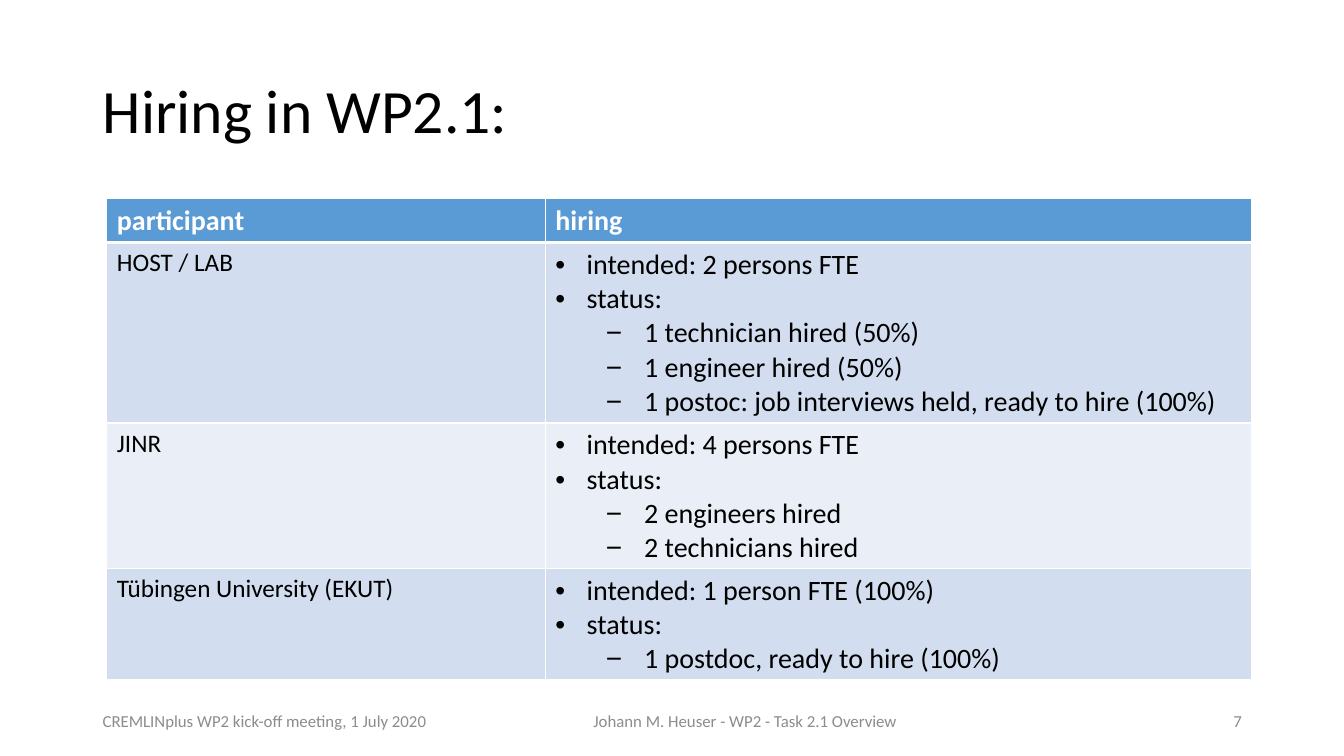
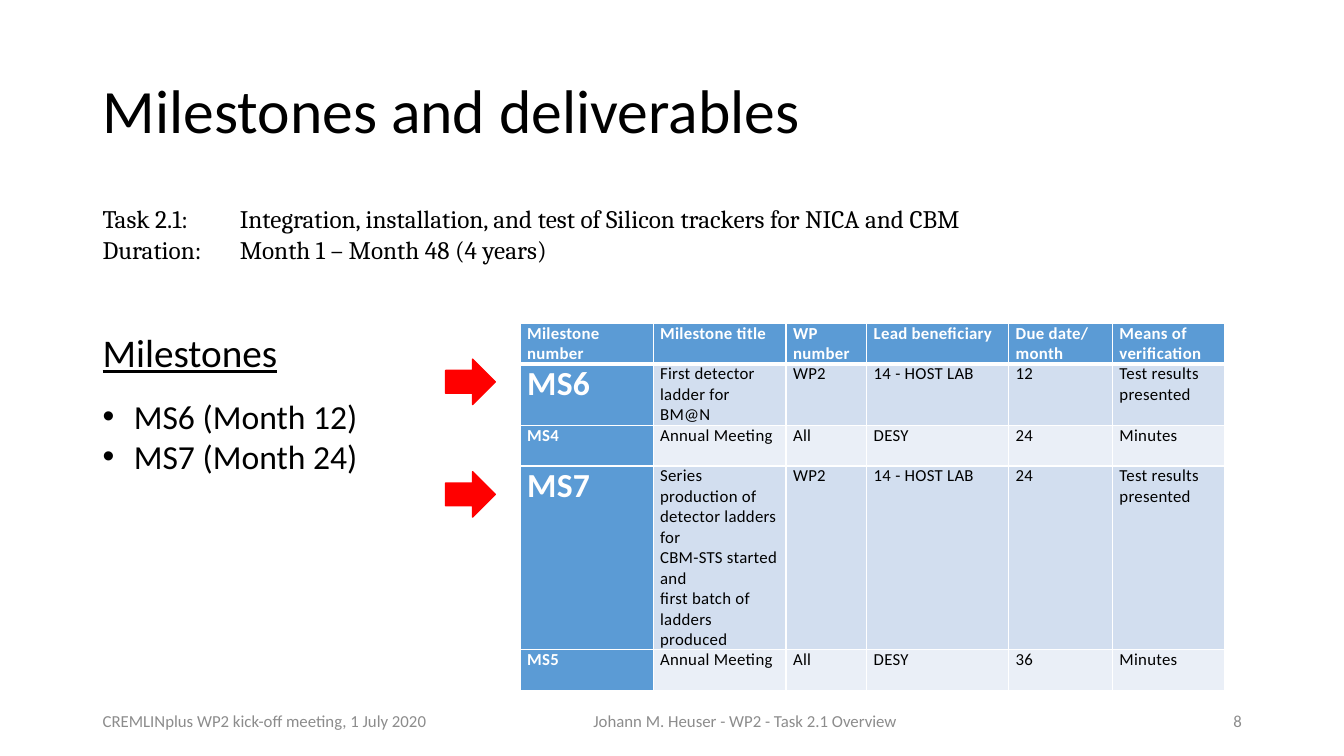
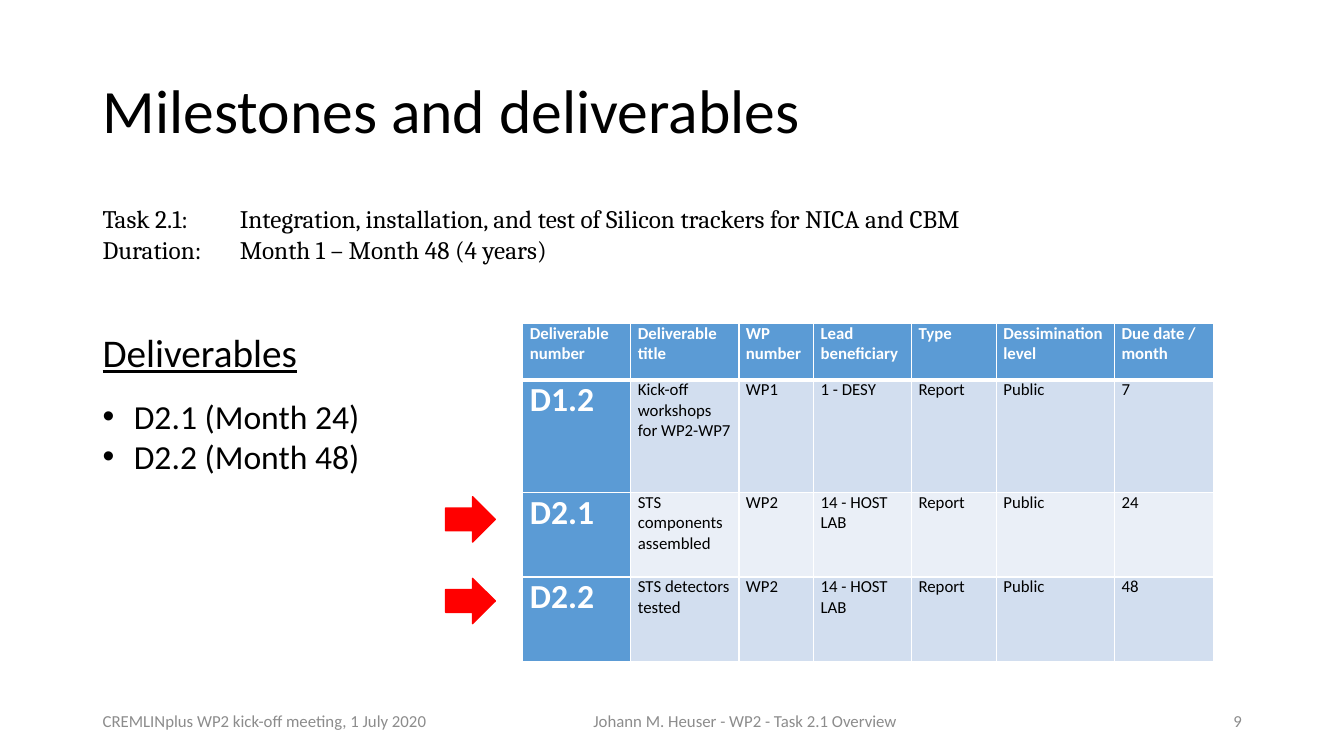
from lxml.etree import SubElement
from pptx import Presentation
from pptx.dml.color import RGBColor
from pptx.enum.shapes import MSO_SHAPE
from pptx.enum.text import MSO_ANCHOR, PP_ALIGN
from pptx.oxml import parse_xml
from pptx.oxml.ns import nsdecls, qn
from pptx.util import Inches, Pt

# Shared style
BLACK = RGBColor(0x00, 0x00, 0x00)
WHITE = RGBColor(0xFF, 0xFF, 0xFF)
GRAY = RGBColor(0x8C, 0x8C, 0x8C)
RED = RGBColor(0xFF, 0x00, 0x00)
BLUE = RGBColor(0x5B, 0x9B, 0xD5)
BANDS = (RGBColor(0xD2, 0xDE, 0xEF), RGBColor(0xEA, 0xEF, 0xF7))

LEFT = 6.9          # left margin, in percent of the slide width
CONTENT_TOP = 26.3  # vertical positions, in percent of the slide height
DETAIL_TOP = 42.8

# Bullet character, left margin and hanging indent in inches, by level
BULLETS = {1: ("•", 0.31, 0.31), 2: ("−", 0.88, 0.38)}


def add_bullet(paragraph, level):
    character, margin, hanging = BULLETS[level]
    properties = paragraph._p.get_or_add_pPr()
    properties.set("marL", str(Inches(margin)))
    properties.set("indent", str(-Inches(hanging)))
    properties.set("lvl", str(level - 1))
    SubElement(properties, qn("a:buFont"), typeface="Arial")
    SubElement(properties, qn("a:buChar"), char=character)


def add_tab(paragraph, position):
    tabs = SubElement(paragraph._p.get_or_add_pPr(), qn("a:tabLst"))
    SubElement(tabs, qn("a:tab"), pos=str(Inches(position)), algn="l")


def write(text_frame, lines, size=18, color=BLACK, font="Calibri", bold=False,
          underline=False, align=PP_ALIGN.LEFT, line_spacing=None, tab=None,
          tracking=0):
    """Fill a text frame; a line is a string or a (string, bullet level) pair."""
    for index, line in enumerate([lines] if isinstance(lines, str) else lines):
        text, level = (line, None) if isinstance(line, str) else line
        paragraph = text_frame.add_paragraph() if index else text_frame.paragraphs[0]
        if level:
            add_bullet(paragraph, level)
        if tab:
            add_tab(paragraph, tab)
        paragraph.alignment = align
        if line_spacing:
            paragraph.line_spacing = line_spacing
        run = paragraph.add_run()
        run.text = text
        run.font.name = font
        run.font.size = Pt(size)
        run.font.bold = bold
        run.font.underline = underline
        run.font.color.rgb = color
        if tracking:
            run._r.get_or_add_rPr().set("spc", str(round(tracking * 100)))


def set_borders(cell, top=1, bottom=1):
    widths = {"lnL": 1, "lnR": 1, "lnT": top, "lnB": bottom}
    properties = cell._tc.get_or_add_tcPr()
    for position, (side, width) in enumerate(widths.items()):
        properties.insert(position, parse_xml(
            f'<a:{side} {nsdecls("a")} w="{Pt(width)}"><a:solidFill>'
            f'<a:srgbClr val="{WHITE}"/></a:solidFill></a:{side}>'))


class Deck:
    """Holds the presentation and the slide that is being filled."""

    def __init__(self):
        self.presentation = Presentation()
        self.presentation.slide_width = Inches(13.33)
        self.presentation.slide_height = Inches(7.5)
        self.slide = None

    def place(self, left, top, width, height):
        """Turn percentages of the slide's size into lengths."""
        across = self.presentation.slide_width / 100
        down = self.presentation.slide_height / 100
        return (round(left * across), round(top * down),
                round(width * across), round(height * down))

    def text(self, lines, area, anchor=MSO_ANCHOR.TOP, wrap=True, **style):
        text_frame = self.slide.shapes.add_textbox(*self.place(*area)).text_frame
        text_frame.word_wrap = wrap
        text_frame.vertical_anchor = anchor
        write(text_frame, lines, **style)

    def start(self, title, number):
        """Add a slide with its title and footer."""
        self.slide = self.presentation.slides.add_slide(
            self.presentation.slide_layouts[6])
        self.text(title, (LEFT, 5.33, 86.25, 19.33), MSO_ANCHOR.MIDDLE,
                  size=44, line_spacing=0.9)
        footer = (
            ("CREMLINplus WP2 kick-off meeting, 1 July 2020", LEFT, 26.7, PP_ALIGN.LEFT),
            ("Johann M. Heuser - WP2 - Task 2.1 Overview", 35, 40.9, PP_ALIGN.CENTER),
            (str(number), 77.25, 15.9, PP_ALIGN.RIGHT),
        )
        for text, left, width, align in footer:
            self.text(text, (left, 92.67, width, 5.33), MSO_ANCHOR.MIDDLE,
                      size=12, color=GRAY, align=align)

    def task(self):
        self.text(["Task 2.1:\tIntegration, installation, and test of Silicon "
                   "trackers for NICA and CBM",
                   "Duration:\tMonth 1 – Month 48 (4 years)"],
                  (LEFT, CONTENT_TOP, 88.65, 9.5), font="Cambria",
                  align=PP_ALIGN.JUSTIFY, tab=1.36)

    def summary(self, heading, items):
        self.text(heading, (LEFT, DETAIL_TOP, 16, 7.6), wrap=False,
                  size=28, underline=True)
        self.text([(item, 1) for item in items], (LEFT, 51.7, 21.4, 12.1), size=24)

    def arrows(self, *tops):
        for top in tops:
            arrow = self.slide.shapes.add_shape(
                MSO_SHAPE.RIGHT_ARROW, *self.place(33.15, top, 3.7, 6))
            arrow.shadow.inherit = False
            arrow.fill.solid()
            arrow.fill.fore_color.rgb = RED
            arrow.line.color.rgb = RED
            arrow.line.width = Pt(1)

    def table(self, rows, area, column_shares, row_shares, style, compact=False):
        """Add a table; style(row, column, value) gives a cell's text format."""
        left, top, width, height = self.place(*area)
        table = self.slide.shapes.add_table(
            len(rows), len(rows[0]), left, top, width, height).table
        for column, share in zip(table.columns, column_shares):
            column.width = round(width * share / sum(column_shares))
        for row, share in zip(table.rows, row_shares):
            row.height = round(height * share / sum(row_shares))
        for row_index, values in enumerate(rows):
            for column_index, value in enumerate(values):
                cell = table.cell(row_index, column_index)
                if compact:
                    cell.margin_left = cell.margin_right = Inches(0.07)
                    cell.margin_top = cell.margin_bottom = 0
                is_head = row_index == 0 or (compact and column_index == 0)
                cell.fill.solid()
                cell.fill.fore_color.rgb = BLUE if is_head else BANDS[(row_index + 1) % 2]
                set_borders(cell, top=3 if row_index == 1 else 1,
                            bottom=3 if row_index == 0 else 1)
                write(cell.text_frame, value, color=WHITE if is_head else BLACK,
                      bold=is_head, **style(row_index, column_index, value))

    def compact_table(self, rows, area, column_shares, row_shares, large, tracking=0):
        """Add a small-type table whose listed row heads are enlarged."""
        self.table(rows, area, column_shares, row_shares, compact=True,
                   style=lambda row, column, value: {
                       "size": 24 if value in large else 12, "tracking": tracking})


def hiring(intended, *status):
    return [(f"intended: {intended}", 1), ("status:", 1)] + [(item, 2) for item in status]


def main():
    deck = Deck()

    # Hiring
    deck.start("Hiring in WP2.1:", 7)
    deck.table(
        [("participant", "hiring"),
         ("HOST / LAB", hiring("2 persons FTE", "1 technician hired (50%)",
                               "1 engineer hired (50%)",
                               "1 postoc: job interviews held, ready to hire (100%)")),
         ("JINR", hiring("4 persons FTE", "2 engineers hired", "2 technicians hired")),
         ("Tübingen University (EKUT)",
          hiring("1 person FTE (100%)", "1 postdoc, ready to hire (100%)"))],
        (7.95, CONTENT_TOP, 85.2, 63.1), (4.35, 7.01), (0.41, 1.79, 1.44, 1.09),
        style=lambda row, column, value: {"size": 18 if row and column == 0 else 20})

    # Milestones
    deck.start("Milestones and deliverables", 8)
    deck.task()
    deck.compact_table(
        [("Milestone number", "Milestone title", "WP number", "Lead beneficiary",
          "Due date/ month", "Means of verification"),
         ("MS6", ["First detector ladder for", "BM@N"], "WP2", "14 - HOST LAB",
          "12", "Test results presented"),
         ("MS4", "Annual Meeting", "All", "DESY", "24", "Minutes"),
         ("MS7", ["Series production of", "detector ladders for",
                  "CBM-STS started and", "first batch of ladders", "produced"],
          "WP2", "14 - HOST LAB", "24", "Test results presented"),
         ("MS5", "Annual Meeting", "All", "DESY", "36", "Minutes")],
        (38.7, DETAIL_TOP, 52.4, 48.5), (1.32, 1.32, 0.8, 1.41, 1.03, 1.11),
        (0.4, 0.61, 0.4, 1.82, 0.4), large=("MS6", "MS7"), tracking=0.2)
    deck.summary("Milestones", ["MS6 (Month 12)", "MS7 (Month 24)"])
    deck.arrows(47.5, 62.4)

    # Deliverables
    deck.start("Milestones and deliverables", 9)
    deck.task()
    deck.compact_table(
        [("Deliverable number", "Deliverable title", "WP number", "Lead beneficiary",
          "Type", "Dessimination level", "Due date / month"),
         ("D1.2", "Kick-off workshops for WP2-WP7", "WP1", "1 - DESY",
          "Report", "Public", "7"),
         ("D2.1", ["STS components", "assembled"], "WP2", "14 - HOST LAB",
          "Report", "Public", "24"),
         ("D2.2", "STS detectors tested", "WP2", "14 - HOST LAB",
          "Report", "Public", "48")],
        (38.9, DETAIL_TOP, 51.4, 44.7), (1.07, 1.07, 0.74, 0.97, 0.84, 1.17, 0.98),
        (0.56, 1.12, 0.84, 0.84), large=("D1.2", "D2.1", "D2.2"))
    deck.summary("Deliverables", ["D2.1 (Month 24)", "D2.2 (Month 48)"])
    deck.arrows(65.7, 76.5)

    deck.presentation.save("out.pptx")


if __name__ == "__main__":
    main()
